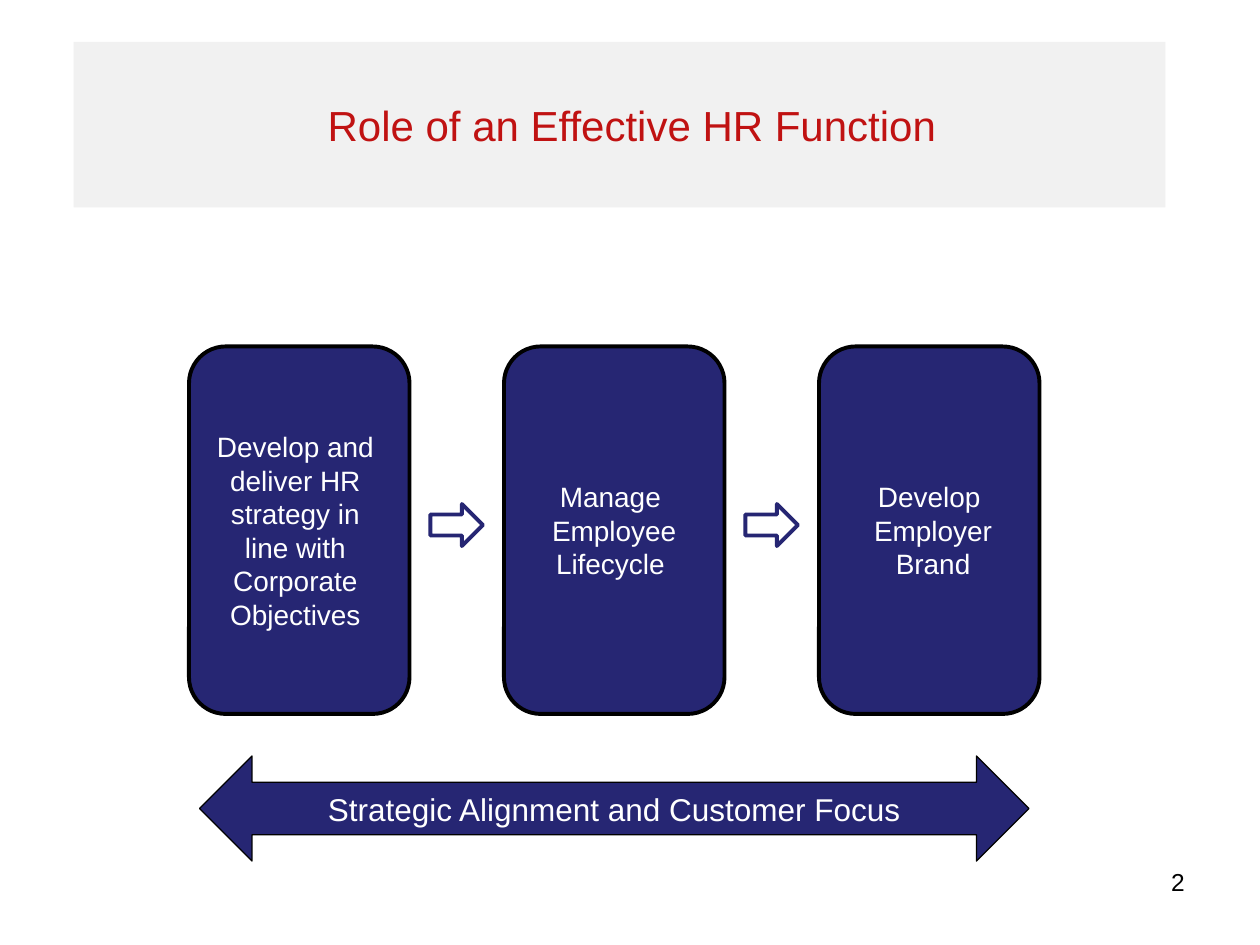
from lxml import etree
from pptx import Presentation
from pptx.dml.color import RGBColor
from pptx.enum.shapes import MSO_SHAPE
from pptx.enum.text import MSO_ANCHOR, PP_ALIGN
from pptx.oxml.ns import qn
from pptx.util import Pt

CARD = MSO_SHAPE.FLOWCHART_ALTERNATE_PROCESS
RIGHT_ARROW = MSO_SHAPE.RIGHT_ARROW
DOUBLE_ARROW = MSO_SHAPE.LEFT_RIGHT_ARROW
RECTANGLE = MSO_SHAPE.RECTANGLE
MIDDLE, TOP = MSO_ANCHOR.MIDDLE, MSO_ANCHOR.TOP
LEFT, CENTER, RIGHT = PP_ALIGN.LEFT, PP_ALIGN.CENTER, PP_ALIGN.RIGHT

NAVY = RGBColor(0x26, 0x26, 0x73)
RED = RGBColor(0xC0, 0x12, 0x12)
GREY = RGBColor(0xEA, 0xEA, 0xEA)
WHITE = RGBColor(0xFF, 0xFF, 0xFF)
BLACK = RGBColor(0x00, 0x00, 0x00)

# Content
TITLE = "Role of an Effective HR Function"
STEPS = [
    ["Develop and ", "deliver HR ", "strategy in ", "line with ", "Corporate ", "Objectives "],
    ["Manage ", "Employee", "Lifecycle "],
    ["Develop", " Employer", " Brand"],
]
FOUNDATION = "Strategic Alignment and Customer Focus"
PAGE_NUMBER = "2"

# Layout in points
CARD_LEFT, CARD_TOP, CARD_WIDTH, CARD_HEIGHT = 108, 198, 126, 210
CARD_PITCH = 180
ARROW_OFFSET, ARROW_TOP, ARROW_WIDTH, ARROW_HEIGHT = 138, 288, 30, 24


def write(shape, lines, size, color, align=CENTER, anchor=MIDDLE, wrap=False):
    frame = shape.text_frame
    frame.text = "\n".join(lines)
    frame.word_wrap = wrap
    frame.vertical_anchor = anchor
    for para in frame.paragraphs:
        para.alignment = align
        for span in para.runs:
            span.font.name = "Arial"
            span.font.size = Pt(size)
            span.font.color.rgb = color


def add_block(page, kind, bounds, fill, line=None, line_width=0):
    block = page.shapes.add_shape(kind, *map(Pt, bounds))
    block.shadow.inherit = False
    block.fill.solid()
    block.fill.fore_color.rgb = fill
    if line is None:
        block.line.fill.background()
    else:
        block.line.color.rgb = line
        block.line.width = Pt(line_width)
    return block


deck = Presentation()
deck.slide_width, deck.slide_height = Pt(720), Pt(540)
page = deck.slides.add_slide(deck.slide_layouts[5])

# Title on a translucent band
band = add_block(page, RECTANGLE, (42, 24, 624, 94.5), GREY)
color_node = band.fill._xPr.find(qn("a:solidFill"))[0]
etree.SubElement(color_node, qn("a:alpha")).set("val", "65000")
page.shapes._spTree.insert(2, band._element)

title = page.shapes.title
title.left, title.top, title.width, title.height = map(Pt, (180, 26.5, 486, 90))
write(title, [TITLE], 24, RED, align=LEFT, wrap=True)

# Step cards joined by arrows
for index, lines in enumerate(STEPS):
    left = CARD_LEFT + index * CARD_PITCH
    card = add_block(page, CARD, (left, CARD_TOP, CARD_WIDTH, CARD_HEIGHT), NAVY, BLACK, 2.25)
    write(card, lines, 16, WHITE)
    if index < len(STEPS) - 1:
        add_block(page, RIGHT_ARROW,
                  (left + ARROW_OFFSET, ARROW_TOP, ARROW_WIDTH, ARROW_HEIGHT),
                  WHITE, NAVY, 2.25)

# Foundation arrow
foundation = add_block(page, DOUBLE_ARROW, (114, 432, 474, 60), NAVY, BLACK, 0.75)
write(foundation, [FOUNDATION], 18, WHITE)

# Page number
number = page.shapes.add_textbox(*map(Pt, (516, 492, 168, 37.5)))
write(number, [PAGE_NUMBER], 14, BLACK, align=RIGHT, anchor=TOP, wrap=True)

deck.save("out.pptx")
